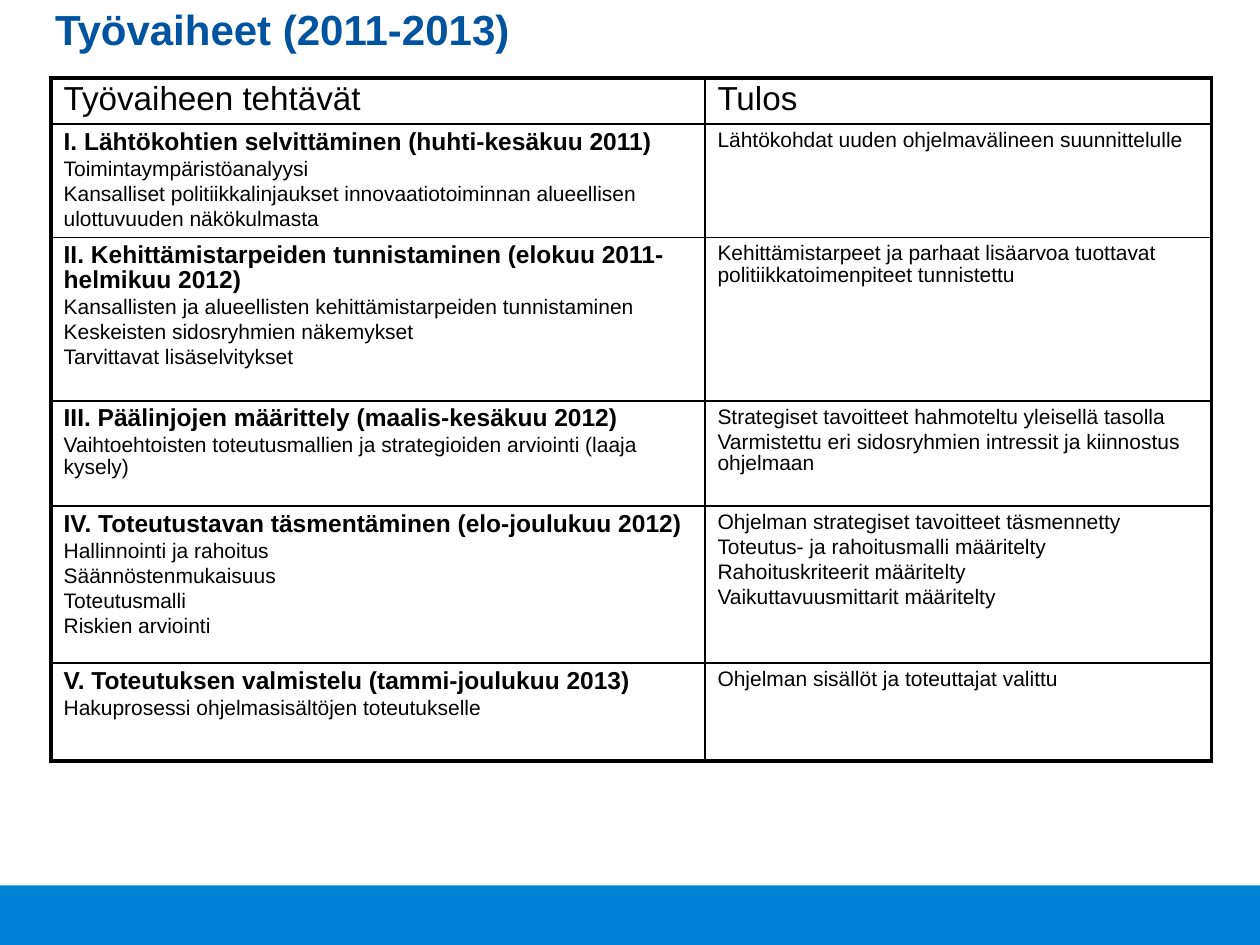
import pptx
import pptx.dml.color
import pptx.enum.shapes
import pptx.enum.text
import pptx.oxml.ns
import pptx.util
from lxml import etree
from pptx.util import Cm


def color(hex_value):
    return pptx.dml.color.RGBColor.from_string(hex_value)


def add_border(cell, side, width):
    """Draw one black cell border; side is L, R, T or B, width is in points."""
    qualified = pptx.oxml.ns.qn
    properties = cell._tc.get_or_add_tcPr()
    line = etree.SubElement(properties, qualified(f"a:ln{side}"), w=str(pptx.util.Pt(width)))
    fill = etree.SubElement(line, qualified("a:solidFill"))
    etree.SubElement(fill, qualified("a:srgbClr"), val="000000")


presentation = pptx.Presentation()
presentation.slide_width = Cm(25.4)
presentation.slide_height = Cm(19.05)
slide = presentation.slides.add_slide(presentation.slide_layouts[6])

# Bottom band
band = slide.shapes.add_shape(
    pptx.enum.shapes.MSO_SHAPE.RECTANGLE, Cm(0), Cm(17.85), Cm(25.4), Cm(1.2)
)
band.shadow.inherit = False
band.fill.solid()
band.fill.fore_color.rgb = color("0083D7")
band.line.fill.background()

# Title
title = slide.shapes.add_textbox(Cm(0.86), Cm(0), Cm(22.63), Cm(1.3))
title.text_frame.word_wrap = True
title.text_frame.vertical_anchor = pptx.enum.text.MSO_ANCHOR.MIDDLE
paragraph = title.text_frame.paragraphs[0]
paragraph.line_spacing = 0.85
run = paragraph.add_run()
run.text = "Työvaiheet (2011-2013)"
run.font.name = "Arial"
run.font.size = pptx.util.Pt(24)
run.font.bold = True
run.font.color.rgb = color("00549F")

# Work phases: tasks on the left, results on the right
phases = [
    (["Työvaiheen tehtävät"], ["Tulos"]),
    (
        [
            "I. Lähtökohtien selvittäminen (huhti-kesäkuu 2011)",
            "Toimintaympäristöanalyysi",
            "Kansalliset politiikkalinjaukset innovaatiotoiminnan alueellisen",
            "ulottuvuuden näkökulmasta",
        ],
        ["Lähtökohdat uuden ohjelmavälineen suunnittelulle"],
    ),
    (
        [
            "II. Kehittämistarpeiden tunnistaminen (elokuu 2011-helmikuu 2012)",
            "Kansallisten ja alueellisten kehittämistarpeiden tunnistaminen",
            "Keskeisten sidosryhmien näkemykset",
            "Tarvittavat lisäselvitykset",
        ],
        ["Kehittämistarpeet ja parhaat lisäarvoa tuottavat politiikkatoimenpiteet tunnistettu"],
    ),
    (
        [
            "III. Päälinjojen määrittely (maalis-kesäkuu 2012)",
            "Vaihtoehtoisten toteutusmallien ja strategioiden arviointi (laaja kysely)",
        ],
        [
            "Strategiset tavoitteet hahmoteltu yleisellä tasolla",
            "Varmistettu eri sidosryhmien intressit ja kiinnostus ohjelmaan",
        ],
    ),
    (
        [
            "IV. Toteutustavan täsmentäminen (elo-joulukuu 2012)",
            "Hallinnointi ja rahoitus",
            "Säännöstenmukaisuus",
            "Toteutusmalli",
            "Riskien arviointi",
        ],
        [
            "Ohjelman strategiset tavoitteet täsmennetty",
            "Toteutus- ja rahoitusmalli määritelty",
            "Rahoituskriteerit määritelty",
            "Vaikuttavuusmittarit määritelty",
        ],
    ),
    (
        [
            "V. Toteutuksen valmistelu (tammi-joulukuu 2013)",
            "Hakuprosessi ohjelmasisältöjen toteutukselle",
        ],
        ["Ohjelman sisällöt ja toteuttajat valittu"],
    ),
]
column_widths = [13.18, 10.21]
row_heights = [0.93, 2.29, 3.29, 2.12, 3.17, 1.97]

table = slide.shapes.add_table(
    len(row_heights), len(column_widths), Cm(1.03), Cm(1.57),
    Cm(sum(column_widths)), Cm(sum(row_heights)),
).table
table.first_row = False
table.horz_banding = False
for column, width in zip(table.columns, column_widths):
    column.width = Cm(width)
for row, height in zip(table.rows, row_heights):
    row.height = Cm(height)

last_row = len(row_heights) - 1
for row_index, phase in enumerate(phases):
    for column_index, lines in enumerate(phase):
        cell = table.cell(row_index, column_index)
        cell.margin_bottom = Cm(0)
        outer_sides = {
            "L": column_index == 0,
            "R": column_index == 1,
            "T": row_index == 0,
            "B": row_index == last_row,
        }
        for side, is_outer in outer_sides.items():
            add_border(cell, side, 2.25 if is_outer else 1)
        cell.fill.background()

        for line_index, text in enumerate(lines):
            is_heading = row_index > 0 and column_index == 0 and line_index == 0
            if line_index == 0:
                paragraph = cell.text_frame.paragraphs[0]
            else:
                paragraph = cell.text_frame.add_paragraph()
                paragraph.space_before = pptx.util.Pt(2.3)
            paragraph.line_spacing = 0.9
            run = paragraph.add_run()
            run.text = text
            run.font.name = "Arial"
            run.font.size = pptx.util.Pt(19 if row_index == 0 else 14 if is_heading else 12)
            run.font.bold = is_heading
            run.font.color.rgb = color("000000")

presentation.save("out.pptx")
